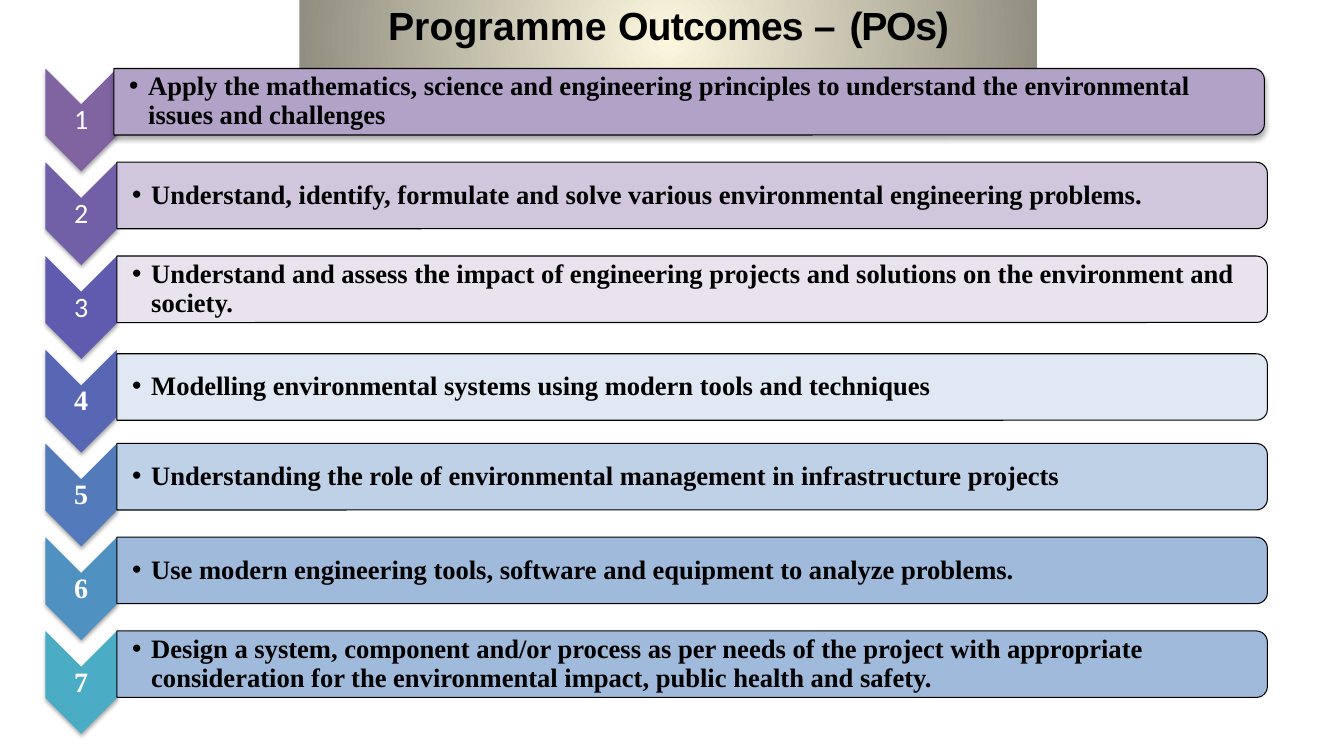
import pptx
import pptx.util
import pptx.dml.color
import pptx.enum.shapes
import pptx.enum.text
import pptx.oxml
import pptx.oxml.ns

Inches = pptx.util.Inches
Pt = pptx.util.Pt
SHAPE = pptx.enum.shapes.MSO_SHAPE
ALIGN = pptx.enum.text.PP_ALIGN
ANCHOR = pptx.enum.text.MSO_ANCHOR

COLORS = {
    "black": "000000",
    "white": "FFFFFF",
    "title_centre": "FCF7DD",
    "title_edge": "918E81",
}

# Chevron colour, bar colour, wording
OUTCOMES = [
    ("8064A2", "B3A2C7", "Apply the mathematics, science and engineering principles "
     "to understand the environmental issues and challenges"),
    ("7160A8", "CCC1DA", "Understand, identify, formulate and solve various "
     "environmental engineering problems."),
    ("5F5BAE", "E6E0EC", "Understand and assess the impact of engineering projects "
     "and solutions on the environment and society."),
    ("5767B4", "DCE6F2", "Modelling environmental systems using modern tools and techniques"),
    ("537ABA", "B9CDE5", "Understanding the role of environmental management in "
     "infrastructure projects"),
    ("4F91C0", "95B3D7", "Use modern engineering tools, software and equipment to "
     "analyze problems."),
    ("4BACC6", "95B3D7", "Design a system, component and/or process as per needs of "
     "the project with appropriate consideration for the environmental impact, "
     "public health and safety."),
]
TITLE_PARTS = [("Programme ", 10), ("Outcomes ", -60), ("– ", 110), ("(POs)", -90)]


def rgb(color):
    return pptx.dml.color.RGBColor.from_string(color)


def xml(markup):
    """Parse one drawing element whose tag starts with a:."""
    tag, rest = markup[1:].split(" ", 1)
    return pptx.oxml.parse_xml(f"<{tag} {pptx.oxml.ns.nsdecls('a')} {rest}")


def write(paragraph, text, size, font, color, bold=False, spacing=None):
    run = paragraph.add_run()
    run.text = text
    run.font.size = Pt(size)
    run.font.name = font
    run.font.bold = bold
    run.font.color.rgb = rgb(color)
    if spacing is not None:
        run.font._element.set("spc", str(spacing))


def set_margins(frame, left, top, right, bottom):
    frame.margin_left, frame.margin_top = Inches(left), Inches(top)
    frame.margin_right, frame.margin_bottom = Inches(right), Inches(bottom)


def add_turned(group, preset, box, color, shadow=None, outlined=False, opacity=100):
    """Add a shape turned by 90 degrees that covers the given upright box."""
    left, top, width, height = box
    shape = group.shapes.add_shape(
        preset, Inches(left + (width - height) / 2), Inches(top + (height - width) / 2),
        Inches(height), Inches(width))
    shape.rotation = 90
    shape.fill.solid()
    shape.fill.fore_color.rgb = rgb(color)
    if opacity < 100:
        color_choice = shape._element.spPr.find(".//" + pptx.oxml.ns.qn("a:srgbClr"))
        color_choice.append(xml(f'<a:alpha val="{opacity * 1000}"/>'))
    if outlined:
        shape.line.color.rgb = rgb(COLORS["black"])
        shape.line.width = Pt(0.75)
    else:
        shape.line.fill.background()
    shape.shadow.inherit = False
    if shadow:
        alpha, blur, distance = shadow
        effects = shape._element.spPr.find(pptx.oxml.ns.qn("a:effectLst"))
        effects.append(xml(
            f'<a:outerShdw blurRad="{Pt(blur)}" dist="{Pt(distance)}" dir="5400000" '
            f'rotWithShape="0"><a:srgbClr val="{COLORS["black"]}">'
            f'<a:alpha val="{alpha * 1000}"/></a:srgbClr></a:outerShdw>'))


def add_label(group, box, left_margin=0.01):
    """Add a middle-anchored text box and return its paragraph."""
    frame = group.shapes.add_textbox(*map(Inches, box)).text_frame
    frame.word_wrap = True
    frame.vertical_anchor = ANCHOR.MIDDLE
    set_margins(frame, left_margin, 0.01, 0.01, 0.01)
    paragraph = frame.paragraphs[0]
    paragraph.line_spacing = 0.9
    return paragraph


def add_chevron(group, left, top, number, color):
    add_turned(group, SHAPE.CHEVRON, (left, top, 0.71, 1.02), color, shadow=(35, 3.1, 1.8))
    label = add_label(group, (left, top + 0.36, 0.71, 0.31))
    label.alignment = ALIGN.CENTER
    bold = number > 3
    write(label, str(number), 20, "Times New Roman" if bold else "Calibri",
          COLORS["white"], bold=bold)


def add_bar(group, left, top, text, color, **look):
    add_turned(group, SHAPE.ROUND_2_SAME_RECTANGLE, (left, top, 11.41, 0.66), color,
               outlined=True, **look)
    outcome = add_label(group, (left, top + 0.03, 11.38, 0.6), left_margin=0.15)
    outcome.level = 1
    properties = outcome._p.get_or_add_pPr()
    properties.set("marL", str(Inches(0.19)))
    properties.set("indent", str(Inches(-0.19)))
    properties.append(xml('<a:buFont typeface="Arial"/>'))
    properties.append(xml('<a:buChar char="•"/>'))
    write(outcome, text, 19, "Times New Roman", COLORS["black"], bold=True)


def add_outcomes(slide, left, top, pitch):
    group = slide.shapes.add_group_shape()
    for row, (chevron_color, bar_color, text) in enumerate(OUTCOMES):
        row_top = top + row * pitch
        add_chevron(group, left, row_top, row + 1, chevron_color)
        # The first bar is raised; the fourth sits slightly lower
        if row == 0:
            add_bar(group, left + 0.68, row_top, text, bar_color, shadow=(32, 3.5, 2.2))
        else:
            drop = 0.04 if row == 3 else 0
            add_bar(group, left + 0.71, row_top + drop, text, bar_color, opacity=90)


def add_title(slide, left, top, width, height):
    title = slide.shapes.title
    title.left, title.top = Inches(left), Inches(top)
    title.width, title.height = Inches(width), Inches(height)

    # Radial gradient, light in the centre
    title.fill.gradient()
    for stop, name in zip(title.fill.gradient_stops, ("title_centre", "title_edge")):
        stop.color.rgb = rgb(COLORS[name])
    title.fill.gradient_stops[0].position = 0
    title.fill.gradient_stops[1].position = 1
    linear = title._element.spPr.find(".//" + pptx.oxml.ns.qn("a:lin"))
    linear.getparent().replace(linear, xml(
        '<a:path path="circle"><a:fillToRect l="50000" t="50000" r="50000" b="50000"/>'
        '</a:path>'))

    frame = title.text_frame
    frame.word_wrap = True
    frame.auto_size = pptx.enum.text.MSO_AUTO_SIZE.SHAPE_TO_FIT_TEXT
    frame.vertical_anchor = ANCHOR.TOP
    set_margins(frame, 0, 0.01, 0, 0)
    heading = frame.paragraphs[0]
    heading.alignment = ALIGN.CENTER
    for text, spacing in TITLE_PARTS:
        write(heading, text, 28, "Arial", COLORS["black"], bold=True, spacing=spacing)


def main():
    deck = pptx.Presentation()
    deck.slide_width, deck.slide_height = Inches(13.33), Inches(7.5)
    slide = deck.slides.add_slide(deck.slide_layouts[5])
    add_title(slide, 2.97, 0, 7.32, 0.49)
    add_outcomes(slide, 0.45, 0.68, 0.93)
    deck.save("out.pptx")


if __name__ == "__main__":
    main()
